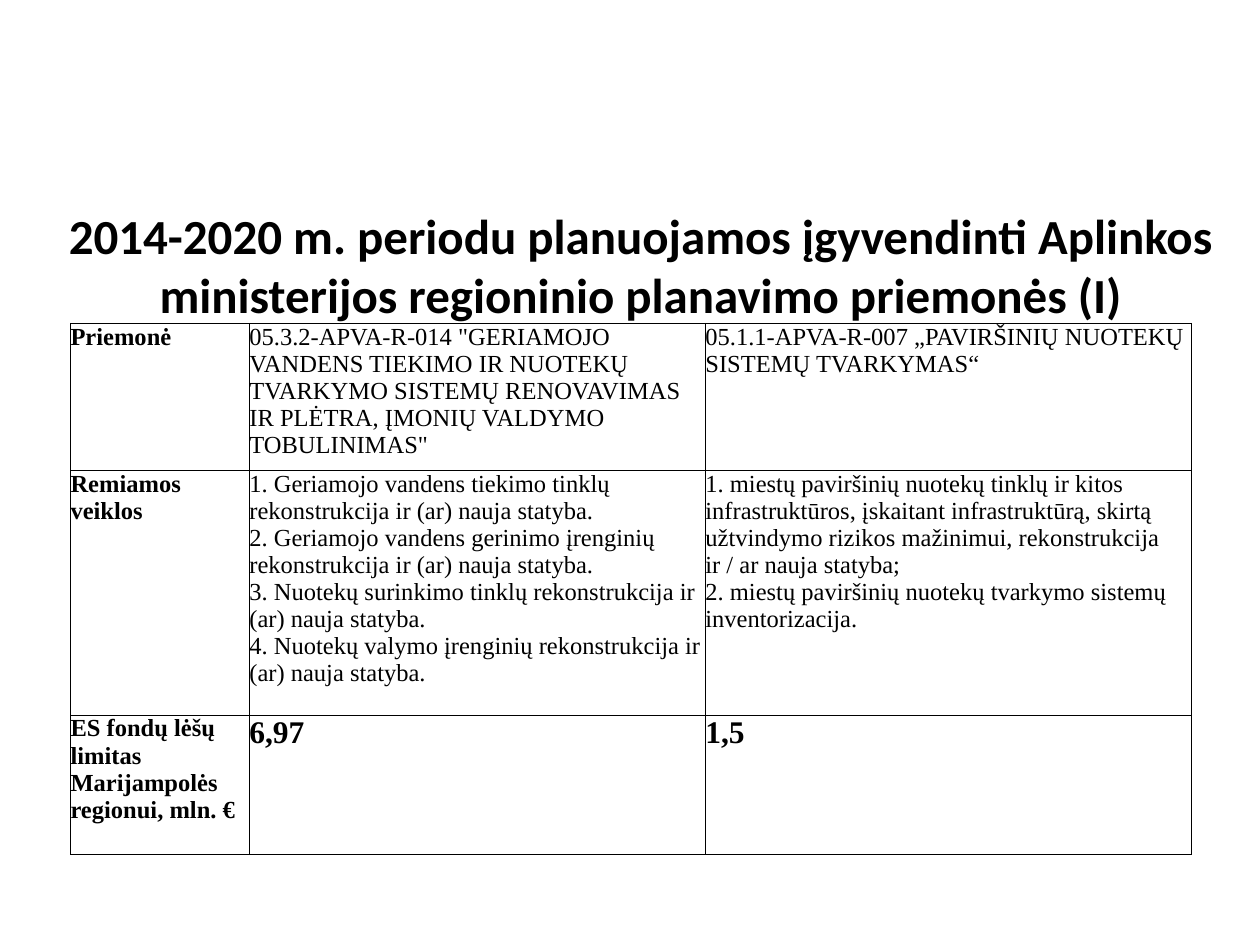
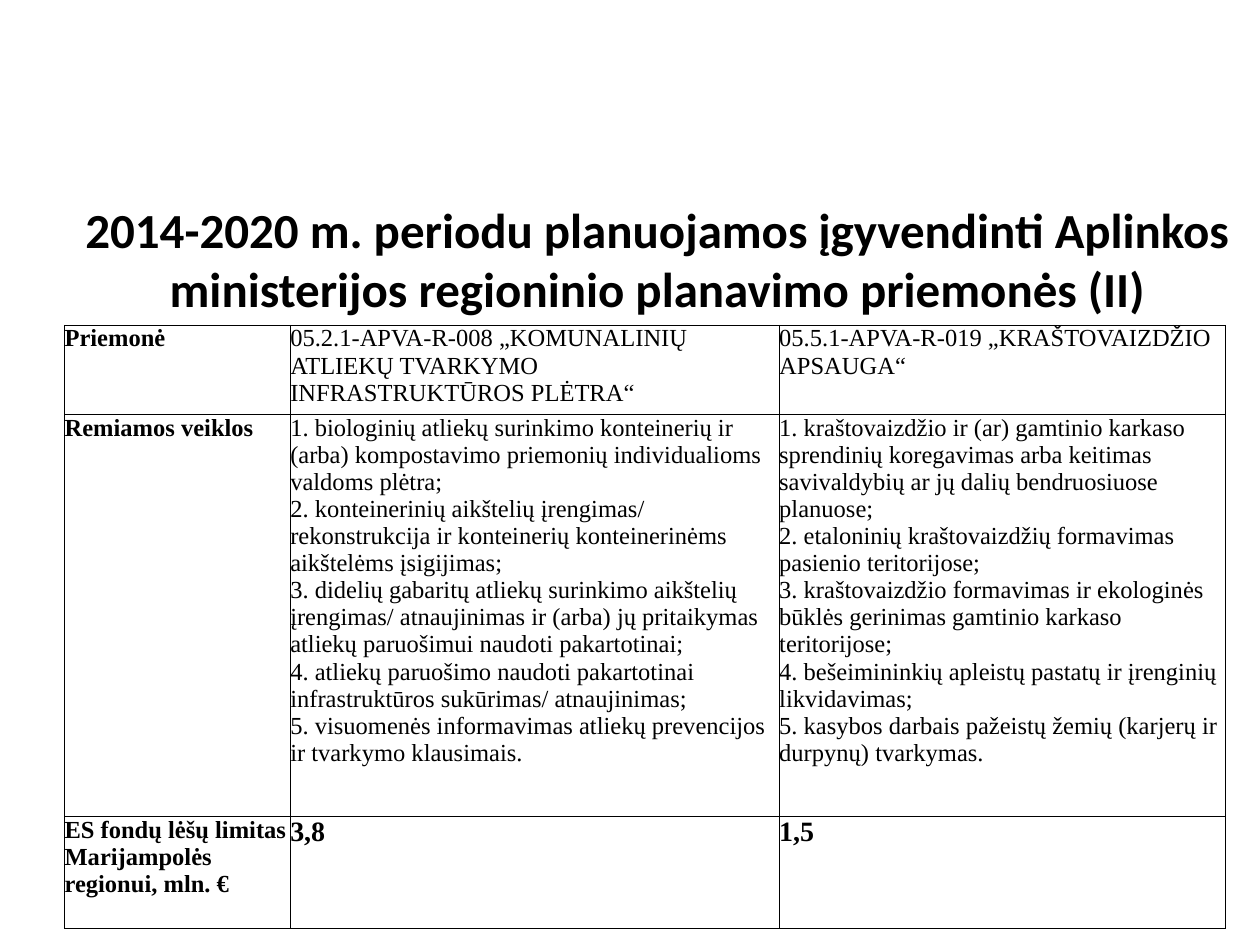
from dataclasses import dataclass

from pptx import Presentation
from pptx.dml.color import RGBColor
from pptx.enum.text import MSO_ANCHOR, PP_ALIGN
from pptx.oxml import parse_xml
from pptx.oxml.ns import nsdecls
from pptx.presentation import Presentation as PresentationType
from pptx.slide import Slide
from pptx.table import _Cell
from pptx.text.text import TextFrame
from pptx.util import Pt

BLACK = "000000"
TITLE_FONT = "Calibri"
TABLE_FONT = "Times New Roman"
BORDER_WIDTH = Pt(0.5)
TITLE = (
    "2014-2020 m. periodu planuojamos įgyvendinti Aplinkos "
    "ministerijos regioninio planavimo priemonės ({})"
)
ROW_LABELS = (
    "Priemonė",
    "Remiamos veiklos",
    "ES fondų lėšų limitas Marijampolės regionui, mln. €",
)


@dataclass(frozen=True)
class Measure:
    name: str
    activities: tuple[str, ...]
    limit: str


@dataclass(frozen=True)
class MeasureSlide:
    numeral: str
    title_box: tuple[float, float, float, float]
    table_corner: tuple[float, float]
    column_widths: tuple[float, ...]
    row_heights: tuple[float, ...]
    limit_size: float
    measures: tuple[Measure, ...]


MEASURE_SLIDES = (
    MeasureSlide(
        numeral="I",
        title_box=(31, 106, 670, 90),
        table_corner=(40.3, 184.8),
        column_widths=(102.2, 260.6, 277.9),
        row_heights=(77.8, 139.8, 79.6),
        limit_size=18,
        measures=(
            Measure(
                '05.3.2-APVA-R-014 "GERIAMOJO VANDENS TIEKIMO IR NUOTEKŲ TVARKYMO '
                'SISTEMŲ RENOVAVIMAS IR PLĖTRA, ĮMONIŲ VALDYMO TOBULINIMAS"',
                (
                    "1. Geriamojo vandens tiekimo tinklų rekonstrukcija ir (ar) nauja statyba.",
                    "2. Geriamojo vandens gerinimo įrenginių rekonstrukcija ir (ar) nauja statyba.",
                    "3. Nuotekų surinkimo tinklų rekonstrukcija ir (ar) nauja statyba.",
                    "4. Nuotekų valymo įrenginių rekonstrukcija ir (ar) nauja statyba.",
                ),
                "6,97",
            ),
            Measure(
                "05.1.1-APVA-R-007 „PAVIRŠINIŲ NUOTEKŲ SISTEMŲ TVARKYMAS“",
                (
                    "1. miestų paviršinių nuotekų tinklų ir kitos infrastruktūros, įskaitant "
                    "infrastruktūrą, skirtą užtvindymo rizikos mažinimui, rekonstrukcija "
                    "ir / ar nauja statyba;",
                    "2. miestų paviršinių nuotekų tvarkymo sistemų inventorizacija.",
                ),
                "1,5",
            ),
        ),
    ),
    MeasureSlide(
        numeral="II",
        title_box=(36.7, 122.4, 677.5, 50.4),
        table_corner=(36.9, 185.8),
        column_widths=(129, 279.4, 254.9),
        row_heights=(51, 229.7, 64.1),
        limit_size=16,
        measures=(
            Measure(
                "05.2.1-APVA-R-008 „KOMUNALINIŲ ATLIEKŲ TVARKYMO INFRASTRUKTŪROS PLĖTRA“",
                (
                    "1. biologinių atliekų surinkimo konteinerių ir (arba) kompostavimo "
                    "priemonių individualioms valdoms plėtra;",
                    "2. konteinerinių aikštelių įrengimas/ rekonstrukcija ir konteinerių "
                    "konteinerinėms aikštelėms įsigijimas;",
                    "3. didelių gabaritų atliekų surinkimo aikštelių įrengimas/ atnaujinimas "
                    "ir (arba) jų pritaikymas atliekų paruošimui naudoti pakartotinai;",
                    "4. atliekų paruošimo naudoti pakartotinai infrastruktūros sukūrimas/ "
                    "atnaujinimas;",
                    "5. visuomenės informavimas atliekų prevencijos ir tvarkymo klausimais.",
                ),
                "3,8",
            ),
            Measure(
                "05.5.1-APVA-R-019 „KRAŠTOVAIZDŽIO APSAUGA“",
                (
                    "1. kraštovaizdžio ir (ar) gamtinio karkaso sprendinių koregavimas arba "
                    "keitimas savivaldybių ar jų dalių bendruosiuose planuose;",
                    "2. etaloninių kraštovaizdžių formavimas pasienio teritorijose;",
                    "3. kraštovaizdžio formavimas ir ekologinės būklės gerinimas gamtinio "
                    "karkaso teritorijose;",
                    "4. bešeimininkių apleistų pastatų ir įrenginių likvidavimas;",
                    "5. kasybos darbais pažeistų žemių (karjerų ir durpynų) tvarkymas.",
                ),
                "1,5",
            ),
        ),
    ),
)


def color(value: str) -> RGBColor:
    return RGBColor.from_string(value)


def write_text(
    text_frame: TextFrame,
    text: str,
    *,
    font: str = TABLE_FONT,
    size: float = 14,
    bold: bool = False,
    align: PP_ALIGN = PP_ALIGN.LEFT,
) -> None:
    text_frame.word_wrap = True
    text_frame.text = text
    for paragraph in text_frame.paragraphs:
        paragraph.alignment = align
        for run in paragraph.runs:
            run.font.name = font
            run.font.size = Pt(size)
            run.font.bold = bold
            run.font.color.rgb = color(BLACK)


def style_cell(cell: _Cell) -> None:
    cell.margin_left = cell.margin_top = cell.margin_right = cell.margin_bottom = Pt(0)
    cell.vertical_anchor = MSO_ANCHOR.TOP
    properties = cell._tc.get_or_add_tcPr()
    for side in "LRTB":
        properties.append(parse_xml(
            f'<a:ln{side} {nsdecls("a")} w="{BORDER_WIDTH}"><a:solidFill>'
            f'<a:srgbClr val="{BLACK}"/></a:solidFill></a:ln{side}>'
        ))
    cell.fill.background()


def add_title(slide: Slide, content: MeasureSlide) -> None:
    shape = slide.shapes.add_textbox(*map(Pt, content.title_box))
    shape.text_frame.vertical_anchor = MSO_ANCHOR.MIDDLE
    write_text(
        shape.text_frame,
        TITLE.format(content.numeral),
        font=TITLE_FONT,
        size=28,
        bold=True,
        align=PP_ALIGN.CENTER,
    )


def add_measure_table(slide: Slide, content: MeasureSlide) -> None:
    columns = [ROW_LABELS] + [
        (measure.name, "\n".join(measure.activities), measure.limit)
        for measure in content.measures
    ]
    table = slide.shapes.add_table(
        len(ROW_LABELS),
        len(columns),
        *map(Pt, content.table_corner),
        Pt(sum(content.column_widths)),
        Pt(sum(content.row_heights)),
    ).table
    table.first_row = table.horz_banding = False
    for row, height in zip(table.rows, content.row_heights):
        row.height = Pt(height)
    limit_row = len(ROW_LABELS) - 1
    for column_index, texts in enumerate(columns):
        table.columns[column_index].width = Pt(content.column_widths[column_index])
        is_label = column_index == 0
        for row_index, text in enumerate(texts):
            cell = table.cell(row_index, column_index)
            is_limit = row_index == limit_row and not is_label
            style_cell(cell)
            write_text(
                cell.text_frame,
                text,
                size=content.limit_size if is_limit else 14,
                bold=is_label or is_limit,
            )


def add_measure_slide(presentation: PresentationType, content: MeasureSlide) -> None:
    slide = presentation.slides.add_slide(presentation.slide_layouts[6])
    add_title(slide, content)
    add_measure_table(slide, content)


def main() -> None:
    presentation = Presentation()
    presentation.slide_width, presentation.slide_height = Pt(720), Pt(540)
    for content in MEASURE_SLIDES:
        add_measure_slide(presentation, content)
    presentation.save("out.pptx")


if __name__ == "__main__":
    main()
